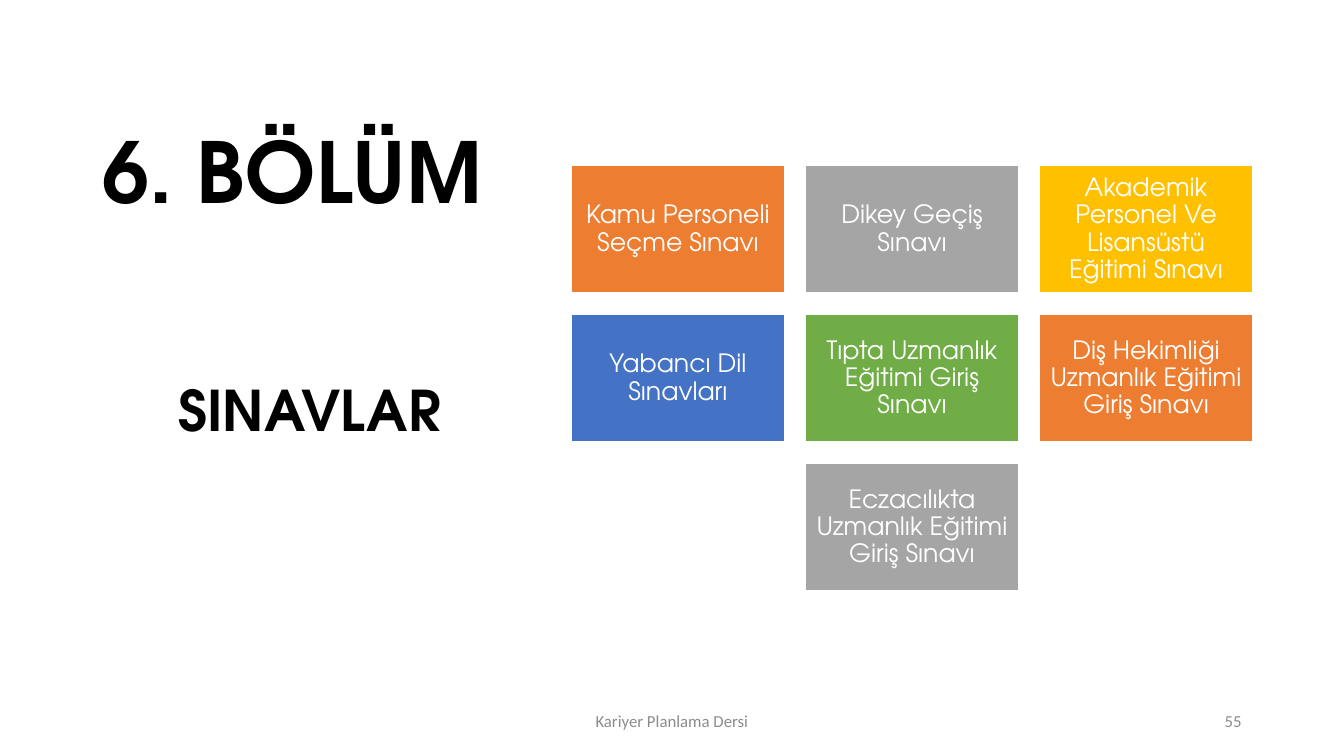
from pptx import Presentation
from pptx.dml.color import RGBColor
from pptx.enum.shapes import MSO_SHAPE
from pptx.enum.text import MSO_ANCHOR, MSO_AUTO_SIZE, PP_ALIGN
from pptx.util import Pt

RECTANGLE = MSO_SHAPE.RECTANGLE
MIDDLE, BOTTOM = MSO_ANCHOR.MIDDLE, MSO_ANCHOR.BOTTOM
LEFT, CENTER, RIGHT = PP_ALIGN.LEFT, PP_ALIGN.CENTER, PP_ALIGN.RIGHT
NO_FIT = MSO_AUTO_SIZE.NONE

ORANGE, GRAY, GOLD, BLUE, GREEN = "ED7D31", "A5A5A5", "FFC000", "4472C4", "70AD47"
BLACK, WHITE, FOOTER_GRAY = "000000", "FFFFFF", "8C8C8C"

EXAM_ROWS = [
    [("Kamu Personeli Seçme Sınavı", ORANGE),
     ("Dikey Geçiş Sınavı", GRAY),
     ("Akademik Personel Ve Lisansüstü Eğitimi Sınavı", GOLD)],
    [("Yabancı Dil Sınavları", BLUE),
     ("Tıpta Uzmanlık Eğitimi Giriş Sınavı", GREEN),
     ("Diş Hekimliği Uzmanlık Eğitimi Giriş Sınavı", ORANGE)],
    [("Eczacılıkta Uzmanlık Eğitimi Giriş Sınavı", GRAY)],
]
COLUMNS = 3
GRID_LEFT, GRID_TOP = 408.25, 118.25
CARD_WIDTH, CARD_HEIGHT = 152, 91.2
COLUMN_STEP, ROW_STEP = 167.2, 106.4


def color(value):
    return RGBColor.from_string(value)


class SlideBuilder:
    heading_font = "TeX Gyre Adventor"
    footer_font = "Calibri"

    def __init__(self, page):
        self.page = page

    def add_text(self, box, text, size, ink, font, align, anchor, bold=False, spacing=0.9):
        frame = box.text_frame
        frame.word_wrap = True
        frame.auto_size = NO_FIT
        frame.vertical_anchor = anchor
        para = frame.paragraphs[0]
        para.alignment = align
        para.line_spacing = spacing
        span = para.add_run()
        span.text = text
        span.font.size = Pt(size)
        span.font.name = font
        span.font.bold = bold
        span.font.color.rgb = color(ink)

    def title(self, text, left, top, width, height):
        box = self.page.shapes.title
        box.left, box.top, box.width, box.height = Pt(left), Pt(top), Pt(width), Pt(height)
        self.add_text(box, text, 60, BLACK, self.heading_font, LEFT, BOTTOM, bold=True)

    def text_box(self, left, top, width, height, text, size, ink, font, align, **style):
        box = self.page.shapes.add_textbox(Pt(left), Pt(top), Pt(width), Pt(height))
        self.add_text(box, text, size, ink, font, align, MIDDLE, **style)

    def subtitle(self, text, left, top, width, height):
        self.text_box(left, top, width, height, text, 40, BLACK,
                      self.heading_font, CENTER, bold=True)

    def footer(self, text, left, width, align):
        self.text_box(left, 500.5, width, 28.75, text, 12, FOOTER_GRAY,
                      self.footer_font, align, spacing=1.0)

    def card(self, text, fill, left, top):
        box = self.page.shapes.add_shape(
            RECTANGLE, Pt(left), Pt(top), Pt(CARD_WIDTH), Pt(CARD_HEIGHT))
        box.shadow.inherit = False
        box.fill.solid()
        box.fill.fore_color.rgb = color(fill)
        box.line.color.rgb = color(WHITE)
        box.line.width = Pt(1)
        frame = box.text_frame
        frame.margin_left = frame.margin_right = Pt(5.4)
        frame.margin_top = frame.margin_bottom = Pt(5.4)
        self.add_text(box, text, 18, WHITE, self.heading_font, CENTER, MIDDLE)


def main():
    deck = Presentation()
    deck.slide_width, deck.slide_height = Pt(960), Pt(540)
    builder = SlideBuilder(deck.slides.add_slide(deck.slide_layouts[5]))

    builder.title("6. BÖLÜM", 66.25, 36, 309.6, 126)
    for row, exams in enumerate(EXAM_ROWS):
        indent = (COLUMNS - len(exams)) / 2
        for column, (name, fill) in enumerate(exams):
            builder.card(name, fill, GRID_LEFT + (column + indent) * COLUMN_STEP,
                         GRID_TOP + row * ROW_STEP)
    builder.subtitle("SINAVLAR", 66.25, 213.85, 309.6, 162.7)
    builder.footer("Kariyer Planlama Dersi", 318, 324, CENTER)
    builder.footer("55", 678, 216, RIGHT)

    deck.save("out.pptx")


if __name__ == "__main__":
    main()
